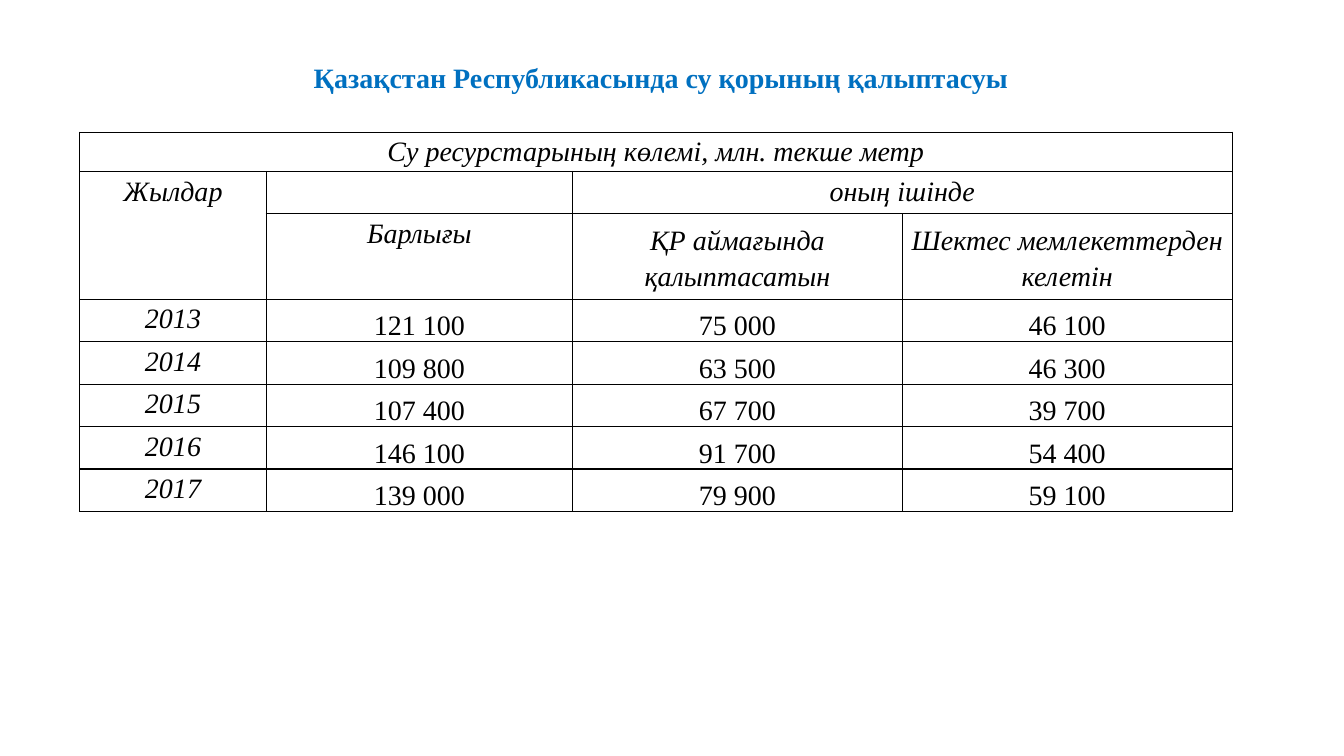
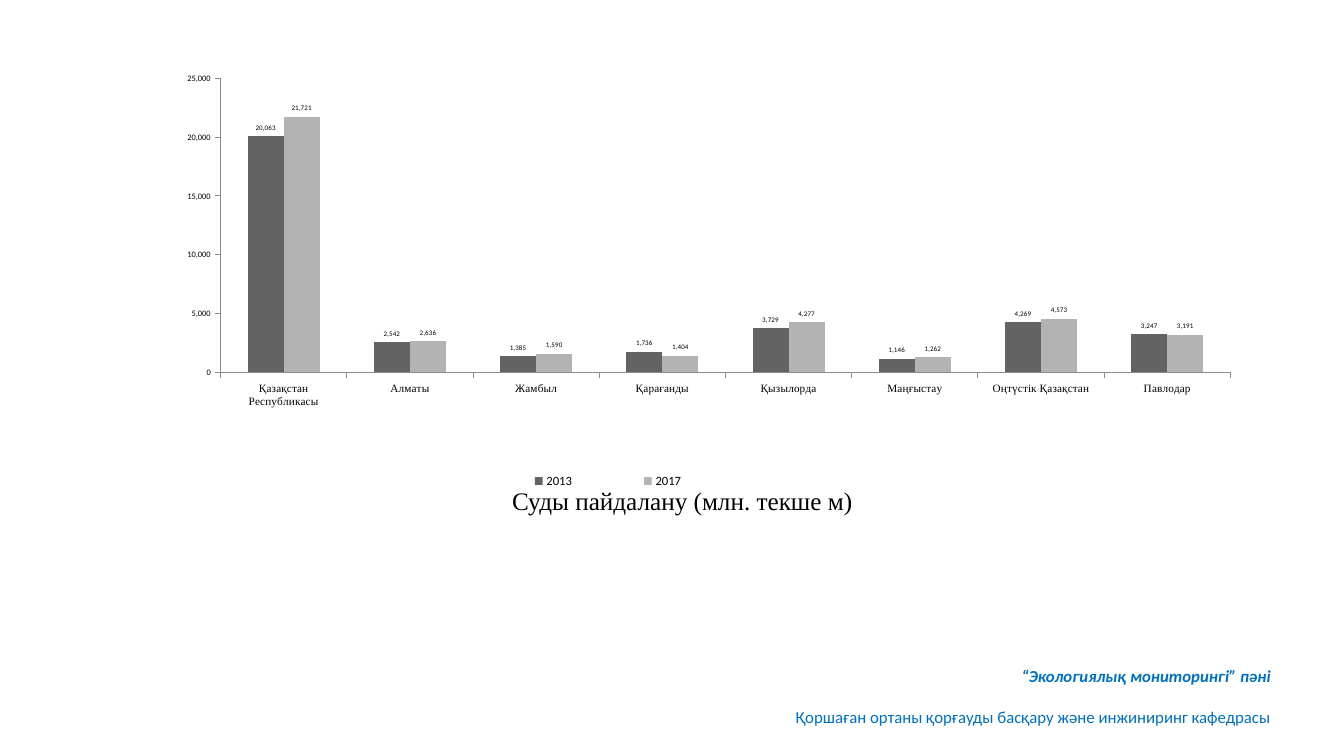
from dataclasses import dataclass

from lxml import etree
from pptx import Presentation
from pptx.chart.axis import _BaseAxis
from pptx.chart.data import CategoryChartData
from pptx.dml.color import RGBColor
from pptx.enum.chart import XL_CHART_TYPE, XL_LABEL_POSITION, XL_LEGEND_POSITION, XL_TICK_MARK
from pptx.enum.text import MSO_ANCHOR, PP_ALIGN
from pptx.oxml.ns import qn
from pptx.slide import Slide
from pptx.table import _Cell
from pptx.text.text import Font
from pptx.util import Cm, Pt

COLUMN_CLUSTERED = XL_CHART_TYPE.COLUMN_CLUSTERED
OUTSIDE_END = XL_LABEL_POSITION.OUTSIDE_END
LEGEND_BOTTOM = XL_LEGEND_POSITION.BOTTOM
TICK_OUTSIDE = XL_TICK_MARK.OUTSIDE
TOP, MIDDLE, BOTTOM = MSO_ANCHOR.TOP, MSO_ANCHOR.MIDDLE, MSO_ANCHOR.BOTTOM
CENTER, RIGHT = PP_ALIGN.CENTER, PP_ALIGN.RIGHT

COLORS = {
    "text": "000000",
    "accent": "0070C0",
    "axis": "8B8B8B",
    "2013": "636363",
    "2017": "B3B3B3",
}
SERIF, SANS = "Times New Roman", "Calibri"
NUMBER_FORMAT = "#,##0"


@dataclass(frozen=True)
class TextStyle:
    size: float
    font: str = SERIF
    color: str = "text"
    bold: bool = False
    italic: bool = False


@dataclass(frozen=True)
class Line:
    text: str
    style: TextStyle
    space_before: float = 0


@dataclass(frozen=True)
class Box:
    """A place on the slide, in centimetres."""
    left: float
    top: float
    width: float
    height: float

    def lengths(self) -> tuple[Cm, Cm, Cm, Cm]:
        return Cm(self.left), Cm(self.top), Cm(self.width), Cm(self.height)


@dataclass(frozen=True)
class HeaderCell:
    row: int
    column: int
    text: str
    last_row: int
    last_column: int
    anchor: MSO_ANCHOR = TOP


@dataclass(frozen=True)
class Series:
    name: str
    values: tuple[int, ...]


HEADING = TextStyle(20, color="accent", bold=True)
CAPTION = TextStyle(18)
SUBJECT = TextStyle(12, SANS, "accent", bold=True, italic=True)
DEPARTMENT = TextStyle(12, SANS, "accent")
TABLE_LABEL = TextStyle(20, italic=True)
TABLE_VALUE = TextStyle(20)
CHART_TEXT = TextStyle(10, SANS)
CATEGORY_TEXT = TextStyle(8)
VALUE_AXIS_TEXT = TextStyle(6, SANS)
LEGEND_TEXT = TextStyle(9, SANS)
DATA_LABEL_TEXT = TextStyle(5, SANS)

COLUMN_WIDTHS = (4.7, 7.72, 8.31, 8.31)
HEADER_HEIGHTS = (0.99, 1.07, 2.15)
YEAR_HEIGHT = 1.07
HEADER_CELLS = (
    HeaderCell(0, 0, "Су ресурстарының көлемі, млн. текше метр", 0, 3),
    HeaderCell(1, 0, "Жылдар", 2, 0),
    HeaderCell(1, 2, "оның ішінде", 1, 3),
    HeaderCell(2, 1, "Барлығы", 2, 1),
    HeaderCell(2, 2, "ҚР аймағында қалыптасатын", 2, 2, MIDDLE),
    HeaderCell(2, 3, "Шектес мемлекеттерден келетін", 2, 3, MIDDLE),
)
YEARS = (
    ("2013", "121 100", "75 000", "46 100"),
    ("2014", "109 800", "63 500", "46 300"),
    ("2015", "107 400", "67 700", "39 700"),
    ("2016", "146 100", "91 700", "54 400"),
    ("2017", "139 000", "79 900", "59 100"),
)
REGIONS = (
    "Қазақстан Республикасы", "Алматы", "Жамбыл", "Қарағанды",
    "Қызылорда", "Маңғыстау", "Оңтүстік Қазақстан", "Павлодар",
)
WATER_USE = (
    Series("2013", (20063, 2542, 1385, 1736, 3729, 1146, 4269, 3247)),
    Series("2017", (21721, 2636, 1590, 1404, 4277, 1262, 4573, 3191)),
)


def rgb(name: str) -> RGBColor:
    return RGBColor.from_string(COLORS[name])


def apply_style(font: Font, style: TextStyle) -> None:
    font.size = Pt(style.size)
    font.name = style.font
    font.bold = style.bold
    font.italic = style.italic
    font.color.rgb = rgb(style.color)


def add_text(slide: Slide, box: Box, lines: list[Line], alignment: PP_ALIGN) -> None:
    frame = slide.shapes.add_textbox(*box.lengths()).text_frame
    frame.word_wrap = True
    frame.vertical_anchor = MIDDLE
    for index, line in enumerate(lines):
        paragraph = frame.add_paragraph() if index else frame.paragraphs[0]
        paragraph.alignment = alignment
        if line.space_before:
            paragraph.space_before = Pt(line.space_before)
        run = paragraph.add_run()
        run.text = line.text
        apply_style(run.font, line.style)


def format_cell(cell: _Cell) -> None:
    """Give a cell its margins, thin black borders and no fill."""
    cell.margin_left = cell.margin_right = Cm(0.2)
    cell.margin_top = cell.margin_bottom = 0
    properties = cell._tc.get_or_add_tcPr()
    for side in ("a:lnL", "a:lnR", "a:lnT", "a:lnB"):
        border = etree.SubElement(properties, qn(side), w=str(Pt(1)))
        fill = etree.SubElement(border, qn("a:solidFill"))
        etree.SubElement(fill, qn("a:srgbClr"), val=COLORS["text"])
    cell.fill.background()


def write_cell(cell: _Cell, text: str, style: TextStyle, anchor: MSO_ANCHOR) -> None:
    cell.vertical_anchor = anchor
    paragraph = cell.text_frame.paragraphs[0]
    paragraph.alignment = CENTER
    paragraph.line_spacing = 1.15
    run = paragraph.add_run()
    run.text = text
    apply_style(run.font, style)


def add_water_table(slide: Slide) -> None:
    heights = HEADER_HEIGHTS + (YEAR_HEIGHT,) * len(YEARS)
    box = Box(2.01, 3.33, sum(COLUMN_WIDTHS), sum(heights))
    table = slide.shapes.add_table(len(heights), len(COLUMN_WIDTHS), *box.lengths()).table
    table.first_row = table.horz_banding = False
    for column, width in zip(table.columns, COLUMN_WIDTHS):
        column.width = Cm(width)
    for row, height in zip(table.rows, heights):
        row.height = Cm(height)
    for cell in table.iter_cells():
        format_cell(cell)
    for header in HEADER_CELLS:
        cell = table.cell(header.row, header.column)
        last = table.cell(header.last_row, header.last_column)
        if (header.row, header.column) != (header.last_row, header.last_column):
            cell.merge(last)
        write_cell(cell, header.text, TABLE_LABEL, header.anchor)
    for row_index, (year, *volumes) in enumerate(YEARS, start=len(HEADER_HEIGHTS)):
        write_cell(table.cell(row_index, 0), year, TABLE_LABEL, TOP)
        for column_index, volume in enumerate(volumes, start=1):
            write_cell(table.cell(row_index, column_index), volume, TABLE_VALUE, BOTTOM)


def manual_layout(x: float, y: float, w: float, h: float, inner: bool = False) -> etree._Element:
    """Build a chart layout from fractions of the chart area."""
    layout = etree.Element(qn("c:layout"))
    manual = etree.SubElement(layout, qn("c:manualLayout"))
    if inner:
        etree.SubElement(manual, qn("c:layoutTarget"), val="inner")
    for tag in ("c:xMode", "c:yMode"):
        etree.SubElement(manual, qn(tag), val="edge")
    for tag, value in (("c:x", x), ("c:y", y), ("c:w", w), ("c:h", h)):
        etree.SubElement(manual, qn(tag), val=str(value))
    return layout


def format_axis(axis: _BaseAxis, style: TextStyle) -> None:
    axis.has_major_gridlines = False
    axis.major_tick_mark = TICK_OUTSIDE
    axis.format.line.color.rgb = rgb("axis")
    axis.format.line.width = Pt(0.75)
    apply_style(axis.tick_labels.font, style)


def add_water_chart(slide: Slide) -> None:
    data = CategoryChartData(number_format=NUMBER_FORMAT)
    data.categories = REGIONS
    for item in WATER_USE:
        data.add_series(item.name, item.values)
    box = Box(2.01, 1.52, 29.59, 11.4)
    chart = slide.shapes.add_chart(COLUMN_CLUSTERED, *box.lengths(), data).chart
    chart.has_title = False
    apply_style(chart.font, CHART_TEXT)

    format_axis(chart.category_axis, CATEGORY_TEXT)
    value_axis = chart.value_axis
    format_axis(value_axis, VALUE_AXIS_TEXT)
    value_axis.minimum_scale, value_axis.maximum_scale = 0, 25000
    value_axis.major_unit = 5000
    value_axis.tick_labels.number_format = NUMBER_FORMAT
    value_axis.tick_labels.number_format_is_linked = False

    plot = chart.plots[0]
    plot.vary_by_categories = False
    plot.gap_width, plot.overlap = 150, 0
    for series in plot.series:
        series.format.fill.solid()
        series.format.fill.fore_color.rgb = rgb(series.name)
        labels = series.data_labels
        labels.show_value = True
        labels.position = OUTSIDE_END
        labels.number_format = NUMBER_FORMAT
        labels.number_format_is_linked = False
        apply_style(labels.font, DATA_LABEL_TEXT)

    chart.has_legend = True
    chart.legend.position = LEGEND_BOTTOM
    chart.legend.include_in_layout = False
    apply_style(chart.legend.font, LEGEND_TEXT)

    chart_space = chart._chartSpace
    plot_area = chart_space.find(".//" + qn("c:plotArea"))
    legend = chart_space.find(".//" + qn("c:legend"))
    for parent in (plot_area, legend):
        for layout in parent.findall(qn("c:layout")):
            parent.remove(layout)
    plot_area.insert(0, manual_layout(0.12, 0.04, 0.86, 0.65, inner=True))
    legend.find(qn("c:legendPos")).addnext(manual_layout(0.33, 0.9, 0.24, 0.06))


def main() -> None:
    presentation = Presentation()
    presentation.slide_width, presentation.slide_height = Cm(33.87), Cm(19.05)
    blank = presentation.slide_layouts[6]

    table_slide = presentation.slides.add_slide(blank)
    add_water_table(table_slide)
    heading = Line("Қазақстан Республикасында су қорының қалыптасуы", HEADING)
    add_text(table_slide, Box(6.02, 1.38, 21.28, 1.13), [heading], CENTER)

    chart_slide = presentation.slides.add_slide(blank)
    caption = Line("Суды пайдалану (млн. текше м)", CAPTION)
    add_text(chart_slide, Box(2.64, 12.05, 29.11, 1.1), [caption], CENTER)
    footer = [
        Line("“Экологиялық мониторингі” пәні", SUBJECT),
        Line("Қоршаған ортаны қорғауды басқару және инжиниринг кафедрасы", DEPARTMENT, 14.5),
    ]
    add_text(chart_slide, Box(1.32, 16.5, 30.96, 2.1), footer, RIGHT)
    add_water_chart(chart_slide)

    presentation.save("out.pptx")


if __name__ == "__main__":
    main()
